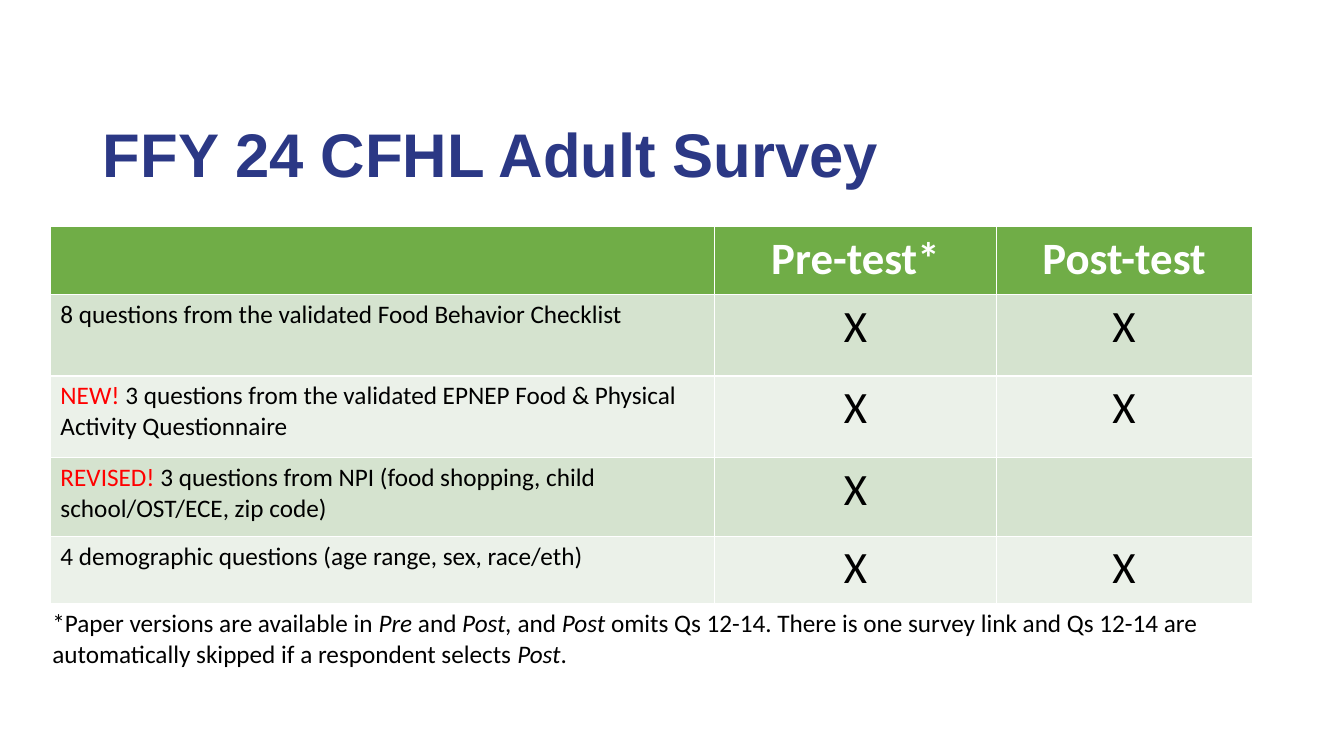
from pptx import Presentation
from pptx.dml.color import RGBColor as Rgb
from pptx.enum.text import MSO_ANCHOR as Anchor, MSO_AUTO_SIZE as Fit, PP_ALIGN as Align
from pptx.util import Inches, Pt

HUES = {"navy": "2B3885", "green": "70AD47", "mint": "D5E3CF", "pale": "EBF1E9",
        "white": "FFFFFF", "black": "000000", "red": "FF0000"}
NAVY = {"name": "Arial", "size": 44, "bold": True, "color": "navy"}
HEAD = {"size": 32, "bold": True, "color": "white"}
MARK = {"size": 32}
RED = {"color": "red"}
ITAL = {"italic": True}

HEADS = ["", "Pre-test*", "Post-test"]
ROWS = [
    ([("8 questions from the validated Food Behavior Checklist", {})], "X", "X"),
    ([("NEW! ", RED),
      ("3 questions from the validated EPNEP Food & Physical Activity Questionnaire", {})],
     "X", "X"),
    ([("REVISED! ", RED),
      ("3 questions from NPI (food shopping, child school/OST/ECE, zip code)", {})], "X", ""),
    ([("4 demographic questions (age range, sex, race/eth)", {})], "X", "X"),
]
WIDE = [6.59, 2.79, 2.54]
TALL = [0.67, 0.81, 0.81, 0.78, 0.67]
NOTE = [
    ("*Paper versions are available in ", {}), ("Pre", ITAL), (" and ", {}),
    ("Post, ", ITAL), ("and ", {}), ("Post", ITAL),
    (" omits Qs 12-14. There is one survey link and Qs 12-14 are automatically "
     "skipped if a respondent selects ", {}),
    ("Post", ITAL), (".", {}),
]


class Deck:
    """Holds the base text style and the current slide."""

    base = {"name": "Calibri", "size": 18, "bold": False, "color": "black"}

    def __init__(self):
        self.show = Presentation()
        self.show.slide_width, self.show.slide_height = Inches(13.33), Inches(7.5)
        self.slide = self.show.slides.add_slide(self.show.slide_layouts[5])

    def put(self, frame, runs, align=Align.LEFT):
        para = frame.paragraphs[0]
        para.alignment = align
        for text, style in runs:
            run = para.add_run()
            run.text = text
            for key, val in {**self.base, **style}.items():
                if key == "color":
                    run.font.color.rgb = Rgb.from_string(HUES[val])
                else:
                    setattr(run.font, key, Pt(val) if key == "size" else val)

    def title(self, text, box):
        head = self.slide.shapes.title
        for key, val in zip(("left", "top", "width", "height"), box):
            setattr(head, key, Inches(val))
        frame = head.text_frame
        frame.vertical_anchor = Anchor.MIDDLE
        frame.auto_size = Fit.NONE
        self.put(frame, [(text, NAVY)])
        frame.paragraphs[0].line_spacing = 0.9

    def table(self, left, top, heads, rows):
        box = map(Inches, (left, top, sum(WIDE), sum(TALL)))
        grid = self.slide.shapes.add_table(len(TALL), len(WIDE), *box).table
        for col, size in zip(grid.columns, WIDE):
            col.width = Inches(size)
        for row, size in zip(grid.rows, TALL):
            row.height = Inches(size)
        for r, row in enumerate([heads, *rows]):
            hue = "green" if r == 0 else ("pale", "mint")[r % 2]
            for c, item in enumerate(row):
                cell = grid.cell(r, c)
                cell.fill.solid()
                cell.fill.fore_color.rgb = Rgb.from_string(HUES[hue])
                if isinstance(item, list):
                    self.put(cell.text_frame, item)
                elif item:
                    style = MARK if r else HEAD
                    self.put(cell.text_frame, [(item, style)], Align.CENTER)

    def text(self, runs, box):
        frame = self.slide.shapes.add_textbox(*map(Inches, box)).text_frame
        frame.word_wrap = True
        frame.auto_size = Fit.SHAPE_TO_FIT_TEXT
        self.put(frame, runs)


def main():
    deck = Deck()
    deck.title("FFY 24 CFHL Adult Survey", (0.92, 0.84, 11.5, 1.45))
    deck.table(0.5, 2.25, HEADS, ROWS)
    deck.text(NOTE, (0.42, 5.98, 11.68, 0.71))
    deck.show.save("out.pptx")


if __name__ == "__main__":
    main()
